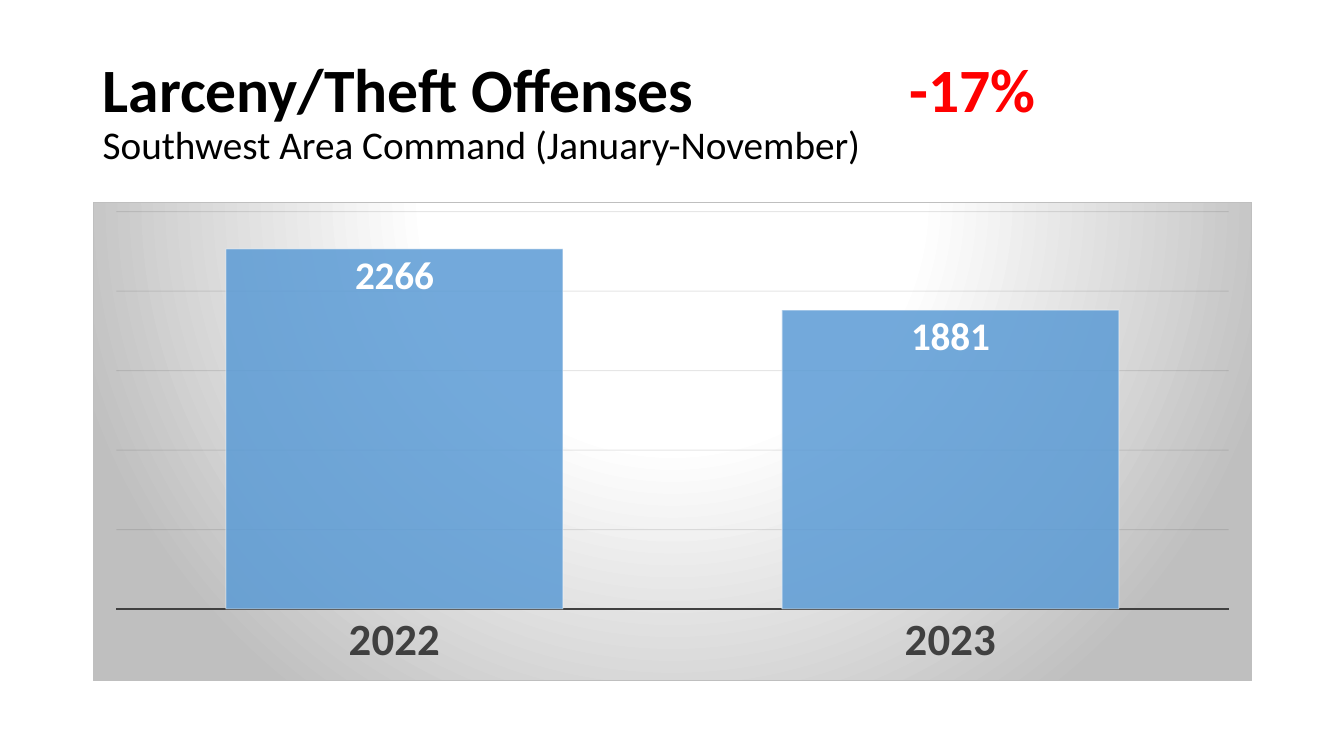
from lxml import etree
from pptx import Presentation
from pptx.chart.data import CategoryChartData
from pptx.dml.color import RGBColor
from pptx.enum import chart as charts, text
from pptx.oxml import ns, parse_xml
from pptx.util import Inches, Pt

BLACK = RGBColor(0x00, 0x00, 0x00)
RED = RGBColor(0xFF, 0x00, 0x00)
WHITE = RGBColor(0xFF, 0xFF, 0xFF)
DARK_GRAY = RGBColor(0x40, 0x40, 0x40)
GRID_GRAY = RGBColor(0x0D, 0x0D, 0x0D)
EDGE_GRAY = RGBColor(0xBF, 0xBF, 0xBF)
BLUE = RGBColor(0x5B, 0x9B, 0xD5)

LEFT, WIDTH = Inches(0.92), Inches(11.5)

BACKDROP = f"""<c:spPr {ns.nsdecls("c", "a")}>
<a:gradFill rotWithShape="1"><a:gsLst>
<a:gs pos="0"><a:srgbClr val="{WHITE}"/></a:gs>
<a:gs pos="39000"><a:srgbClr val="{WHITE}"/></a:gs>
<a:gs pos="100000"><a:srgbClr val="{EDGE_GRAY}"/></a:gs>
</a:gsLst><a:path path="circle">
<a:fillToRect l="50000" t="-80000" r="50000" b="180000"/></a:path></a:gradFill>
<a:ln w="9525"><a:solidFill><a:srgbClr val="{EDGE_GRAY}"/></a:solidFill></a:ln>
</c:spPr>"""


def apply(target, values):
    for name, value in values.items():
        setattr(target, name, value)


def style_font(font, size, color, bold):
    apply(font, {"name": "Calibri", "size": Pt(size), "bold": bold})
    font.color.rgb = color


def style_line(line, color, width):
    line.color.rgb = color
    line.width = Pt(width)


def add_run(paragraph, words, size, color, bold):
    run = paragraph.add_run()
    run.text = words
    style_font(run.font, size, color, bold)


def set_alpha(chart, query, percent):
    for color in chart.element.xpath(query):
        etree.SubElement(color, ns.qn("a:alpha"), val=str(percent * 1000))


def set_plot_layout(chart, **box):
    plot_area = chart.element.xpath("c:chart/c:plotArea")[0]
    for old_layout in plot_area.xpath("c:layout"):
        plot_area.remove(old_layout)
    layout = etree.Element(ns.qn("c:layout"))
    manual = etree.SubElement(layout, ns.qn("c:manualLayout"))
    settings = {"layoutTarget": "inner", "xMode": "edge", "yMode": "edge", **box}
    for tag, value in settings.items():
        etree.SubElement(manual, ns.qn(f"c:{tag}"), val=str(value))
    plot_area.insert(0, layout)


def add_heading(slide):
    frame = slide.shapes.add_textbox(LEFT, Inches(0.4), WIDTH, Inches(1.45)).text_frame
    apply(frame, {"word_wrap": True, "vertical_anchor": text.MSO_ANCHOR.MIDDLE})
    heading = frame.paragraphs[0]
    heading.line_spacing = 0.9
    tabs = etree.SubElement(heading._p.get_or_add_pPr(), ns.qn("a:tabLst"))
    etree.SubElement(tabs, ns.qn("a:tab"), pos=str(Inches(8)), algn="l")
    add_run(heading, "Larceny/Theft Offenses\t", 44, BLACK, True)
    add_run(heading, "-17%", 44, RED, True)
    heading.add_line_break()
    add_run(heading, "Southwest Area Command (January-November)", 28, BLACK, False)


def add_offense_chart(slide):
    offenses = CategoryChartData()
    offenses.categories = ["2022", "2023"]
    offenses.add_series("Series 1", [2266, 1881])
    chart = slide.shapes.add_chart(
        charts.XL_CHART_TYPE.COLUMN_CLUSTERED,
        LEFT, Inches(2), WIDTH, Inches(4.76), offenses).chart
    apply(chart, {"has_legend": False, "has_title": False})
    style_font(chart.font, 10, BLACK, False)

    years = chart.category_axis
    apply(years, {"major_tick_mark": charts.XL_TICK_MARK.NONE,
                  "minor_tick_mark": charts.XL_TICK_MARK.NONE})
    style_font(years.tick_labels.font, 32, DARK_GRAY, True)
    style_line(years.format.line, DARK_GRAY, 1.5)

    counts = chart.value_axis
    apply(counts, {"minimum_scale": 0, "maximum_scale": 2500, "major_unit": 500,
                   "has_major_gridlines": True, "visible": False})
    style_line(counts.major_gridlines.format.line, GRID_GRAY, 0.75)

    columns = chart.plots[0]
    apply(columns, {"gap_width": 65, "vary_by_categories": False})
    bars = columns.series[0]
    bars.format.fill.solid()
    bars.format.fill.fore_color.rgb = BLUE
    style_line(bars.format.line, WHITE, 0.75)
    labels = bars.data_labels
    apply(labels, {"show_value": True,
                   "position": charts.XL_LABEL_POSITION.INSIDE_END})
    style_font(labels.font, 28, WHITE, True)

    set_alpha(chart, ".//c:ser/c:spPr/a:solidFill/a:srgbClr", 85)
    set_alpha(chart, ".//c:ser/c:spPr/a:ln//a:srgbClr", 50)
    set_alpha(chart, ".//c:majorGridlines//a:srgbClr", 10)
    set_plot_layout(chart, x=0.02, y=0.02, w=0.96, h=0.83)
    chart.element.xpath("c:chart")[0].addnext(parse_xml(BACKDROP))


def main():
    deck = Presentation()
    apply(deck, {"slide_width": Inches(13.33), "slide_height": Inches(7.5)})
    slide = deck.slides.add_slide(deck.slide_layouts[6])
    add_heading(slide)
    add_offense_chart(slide)
    deck.save("out.pptx")


if __name__ == "__main__":
    main()
